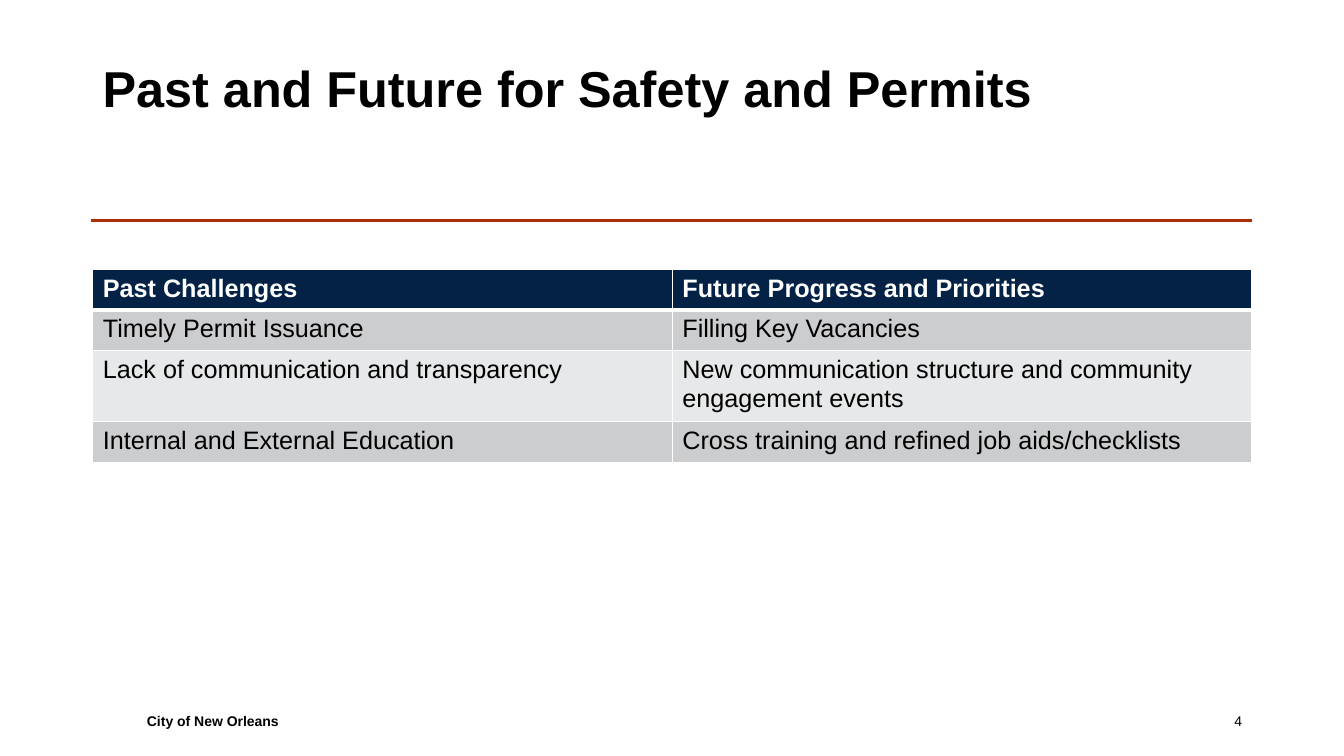
from lxml import etree
from pptx import Presentation
from pptx import util as u
from pptx.dml import color
from pptx.enum import shapes, text
from pptx.oxml import ns

COLORS = {
    "ink": "000000",
    "white": "FFFFFF",
    "rule": "AD2F01",
    "header": "032246",
    "odd": "CCCDCF",
    "even": "E7E8E9",
}
LEFT, WIDTH = 66.24, 828
PRIORITIES = [
    ("Past Challenges", "Future Progress and Priorities"),
    ("Timely Permit Issuance", "Filling Key Vacancies"),
    ("Lack of communication and transparency",
     "New communication structure and community engagement events"),
    ("Internal and External Education",
     "Cross training and refined job aids/checklists"),
]


def rgb(name):
    """Return the named colour."""
    return color.RGBColor.from_string(COLORS[name])


def write(frame, words, size, ink="ink", bold=False, align=text.PP_ALIGN.LEFT):
    """Put one formatted paragraph in a text frame."""
    paragraph = frame.paragraphs[0]
    paragraph.alignment = align
    run = paragraph.add_run()
    run.text = words
    font_format = {"name": "Arial", "size": u.Pt(size), "bold": bold}
    for attribute, value in font_format.items():
        setattr(run.font, attribute, value)
    run.font.color.rgb = rgb(ink)


def add_label(slide, box, words, size, **style):
    """Add a vertically centred text box."""
    frame = slide.shapes.add_textbox(*map(u.Pt, box)).text_frame
    frame_format = {"word_wrap": True, "vertical_anchor": text.MSO_ANCHOR.MIDDLE}
    for attribute, value in frame_format.items():
        setattr(frame, attribute, value)
    write(frame, words, size, **style)


def add_rule(slide, start, end, y):
    """Add the horizontal line under the title."""
    rule = slide.shapes.add_connector(
        shapes.MSO_CONNECTOR.STRAIGHT, u.Pt(start), u.Pt(y), u.Pt(end), u.Pt(y))
    rule.line.color.rgb = rgb("rule")
    rule.line.width = u.Pt(2.75)
    etree.SubElement(rule._element.spPr, ns.qn("a:effectLst"))


def add_borders(cell, widths):
    """Draw white cell borders with the given widths by side."""
    properties = cell._tc.get_or_add_tcPr()
    for side, width in widths.items():
        border = etree.SubElement(properties, ns.qn(f"a:ln{side}"), w=str(u.Pt(width)))
        fill = etree.SubElement(border, ns.qn("a:solidFill"))
        etree.SubElement(fill, ns.qn("a:srgbClr"), val=COLORS["white"])


def add_priorities(slide, top, row_height):
    """Add the table of challenges and priorities."""
    rows, columns = len(PRIORITIES), len(PRIORITIES[0])
    box = map(u.Pt, (LEFT, top, WIDTH, rows * row_height))
    table = slide.shapes.add_table(rows, columns, *box).table
    for i, entries in enumerate(PRIORITIES):
        header = i == 0
        band = "header" if header else "odd" if i % 2 else "even"
        widths = {"L": 1, "R": 1, "T": 3 if i == 1 else 1, "B": 3 if header else 1}
        for j, words in enumerate(entries):
            cell = table.cell(i, j)
            add_borders(cell, widths)
            cell.fill.solid()
            cell.fill.fore_color.rgb = rgb(band)
            write(cell.text_frame, words, 18, "white" if header else "ink", header)


def main():
    """Build and save the slide."""
    deck = Presentation()
    deck.slide_width, deck.slide_height = u.Pt(960), u.Pt(540)
    slide = deck.slides.add_slide(deck.slide_layouts[6])
    add_label(slide, (97.92, 500.4, 544.32, 28.8), "City of New Orleans", 10, bold=True)
    add_label(slide, (678.24, 500.4, 216, 28.8), "4", 10, align=text.PP_ALIGN.RIGHT)
    add_rule(slide, 65, 894.24, 157.5)
    add_label(slide, (LEFT, 28.8, WIDTH, 67.68),
              "Past and Future for Safety and Permits", 36, bold=True)
    add_priorities(slide, 192.24, 29.2)
    deck.save("out.pptx")


if __name__ == "__main__":
    main()
